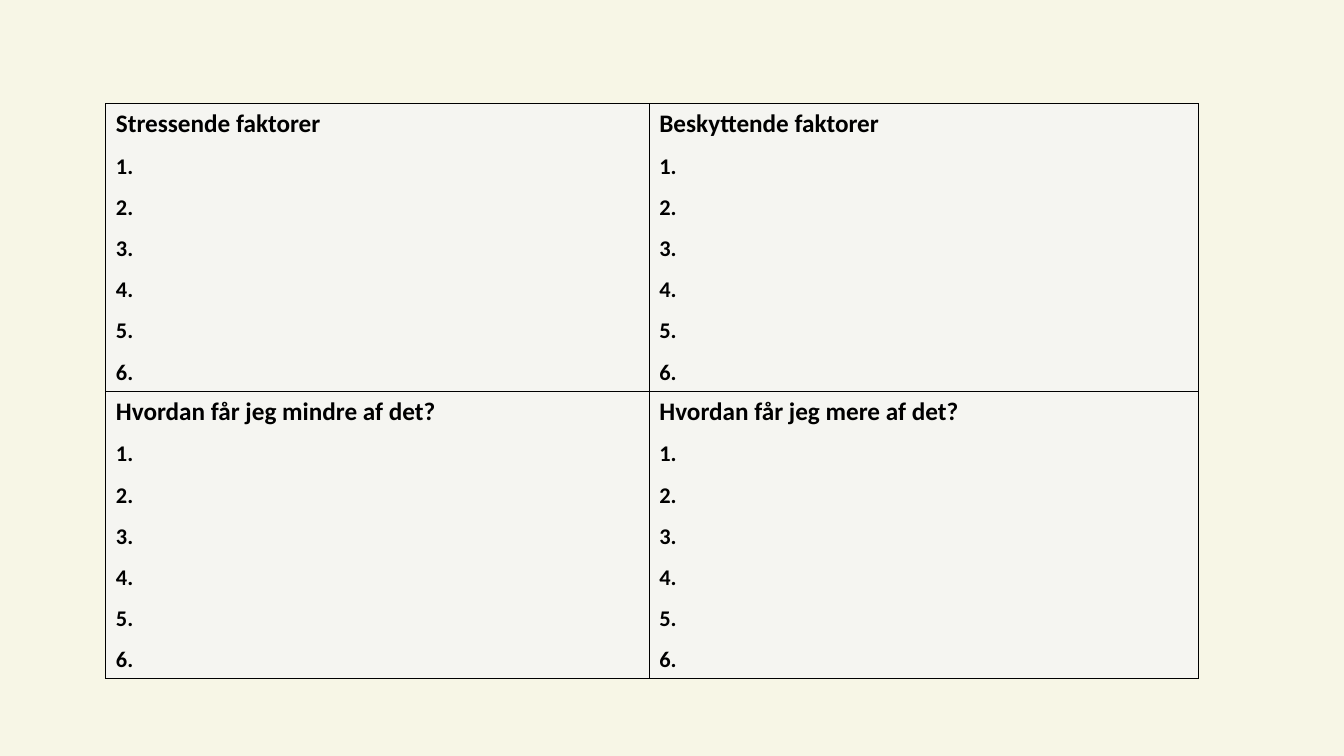
from lxml import etree
from pptx import Presentation
from pptx.dml.color import RGBColor
from pptx.oxml.ns import qn
from pptx.util import Inches, Pt

QUADRANTS = [
    ["Stressende faktorer", "Beskyttende faktorer"],
    ["Hvordan får jeg mindre af det?", "Hvordan får jeg mere af det?"],
]
ANSWERS = [f"{number}." for number in range(1, 7)]

SLIDE_WIDTH, SLIDE_HEIGHT = 13.33, 7.5
LEFT, TOP = 1.05, 1.03
COLUMN_WIDTHS = [5.39, 5.45]
ROW_HEIGHT = 0.38 * SLIDE_HEIGHT
FONT = "Calibri"
BACKGROUND, CELL_FILL, INK = "F7F6E6", "F5F5F1", "000000"


def paint(fill, color):
    fill.solid()
    fill.fore_color.rgb = RGBColor.from_string(color)


def write(paragraph, text, size, color=INK, bold=True, spacing=1.0):
    paragraph.line_spacing = spacing
    run = paragraph.add_run()
    run.text = text
    run.font.name = FONT
    run.font.size = Pt(size)
    run.font.bold = bold
    run.font.color.rgb = RGBColor.from_string(color)


def outline(cell, color=INK, width=1):
    """Draw all four cell borders; call before the cell is filled."""
    properties = cell._tc.get_or_add_tcPr()
    for side in ("L", "R", "T", "B"):
        line = etree.SubElement(properties, qn(f"a:ln{side}"), w=str(Pt(width)))
        solid = etree.SubElement(line, qn("a:solidFill"))
        etree.SubElement(solid, qn("a:srgbClr"), val=color)


def fill_quadrant(cell, heading):
    outline(cell)
    paint(cell.fill, CELL_FILL)
    cell.margin_left = cell.margin_right = Inches(0.1)
    cell.margin_top = cell.margin_bottom = Inches(0.05)
    write(cell.text_frame.paragraphs[0], heading, size=18)
    for answer in ANSWERS:
        write(cell.text_frame.add_paragraph(), answer, size=16, spacing=1.5)


def main():
    deck = Presentation()
    deck.slide_width = Inches(SLIDE_WIDTH)
    deck.slide_height = Inches(SLIDE_HEIGHT)
    slide = deck.slides.add_slide(deck.slide_layouts[6])
    paint(slide.background.fill, BACKGROUND)

    grid = slide.shapes.add_table(
        len(QUADRANTS), len(COLUMN_WIDTHS), Inches(LEFT), Inches(TOP),
        Inches(sum(COLUMN_WIDTHS)), Inches(ROW_HEIGHT * len(QUADRANTS)),
    ).table
    grid.first_row = grid.horz_banding = False
    for column, width in zip(grid.columns, COLUMN_WIDTHS):
        column.width = Inches(width)
    for row, headings in enumerate(QUADRANTS):
        for column, heading in enumerate(headings):
            fill_quadrant(grid.cell(row, column), heading)

    deck.save("out.pptx")


if __name__ == "__main__":
    main()
